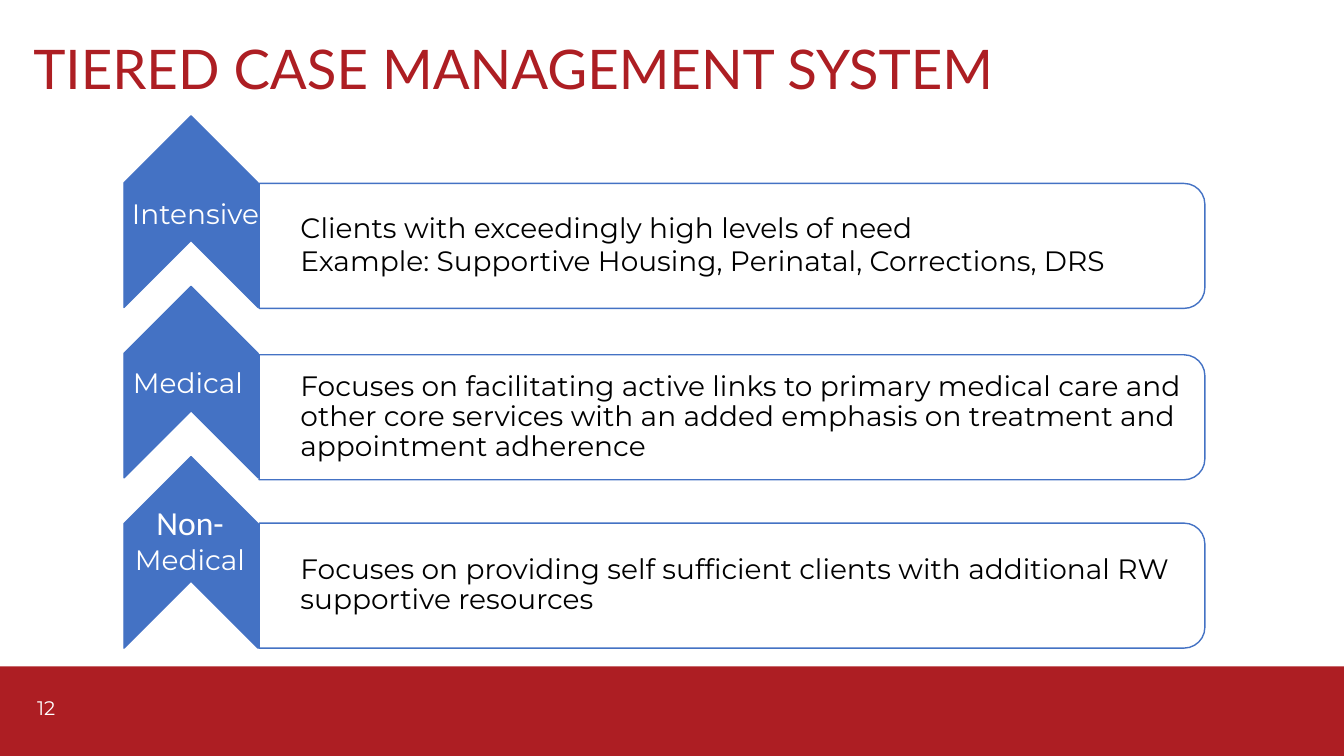
from dataclasses import dataclass

import lxml.etree
import pptx
import pptx.dml.color
import pptx.enum.shapes
import pptx.enum.text
import pptx.oxml.ns
import pptx.util

RGBColor = pptx.dml.color.RGBColor
MSO_SHAPE = pptx.enum.shapes.MSO_SHAPE
PP_ALIGN = pptx.enum.text.PP_ALIGN
MSO_ANCHOR = pptx.enum.text.MSO_ANCHOR

EMU_PER_PX = 9144  # 100 px to the inch
RED = RGBColor(0xAD, 0x1E, 0x23)
BLUE = RGBColor(0x44, 0x72, 0xC4)
WHITE = RGBColor(0xFF, 0xFF, 0xFF)
BLACK = RGBColor(0x00, 0x00, 0x00)

SLIDE_W, SLIDE_H = 1333, 750
BAND_TOP = 661
ARROW_LEFT, ARROW_TOP, ARROW_W, ARROW_H = 123, 115, 133, 190
ARROW_PITCH = 169
CARD_LEFT, CARD_W, CARD_H = 257, 938, 124
TEXT_W, TEXT_H = 932, 112


@dataclass(frozen=True)
class LabelLine:
    text: str
    size: int = 20
    font: str = "Montserrat"


@dataclass(frozen=True)
class Tier:
    label: tuple[LabelLine, ...]
    label_box: tuple[int, int, int, int]
    label_align: PP_ALIGN
    card_top: int
    description: tuple[str, ...]


TIERS = (
    Tier((LabelLine("Intensive"),), (121, 190, 151, 44), PP_ALIGN.LEFT, 182,
         ("Clients with exceedingly high levels of need",
          "Example: Supportive Housing, Perinatal, Corrections, DRS")),
    Tier((LabelLine("Medical"),), (122, 358, 133, 44), PP_ALIGN.LEFT, 352,
         ("Focuses on facilitating active links to primary medical care and other "
          "core services with an added emphasis on treatment and appointment adherence",)),
    Tier((LabelLine("Non-", 24, "Calibri"), LabelLine("Medical")),
         (121, 493, 135, 84), PP_ALIGN.CENTER, 519,
         ("Focuses on providing self sufficient clients with additional RW "
          "supportive resources",)),
)


def px(length: float) -> pptx.util.Emu:
    return pptx.util.Emu(round(length * EMU_PER_PX))


def write_line(frame, text: str, *, first: bool = True, size: int = 20,
               font: str = "Montserrat", color: RGBColor = WHITE,
               align: PP_ALIGN = PP_ALIGN.LEFT, line_spacing: float = 1.0,
               space_after: float = 0) -> None:
    """Fill the first paragraph of the frame, or append another one."""
    paragraph = frame.paragraphs[0] if first else frame.add_paragraph()
    paragraph.alignment = align
    paragraph.line_spacing = line_spacing
    paragraph.space_after = pptx.util.Pt(space_after)
    run = paragraph.add_run()
    run.text = text
    run.font.size = pptx.util.Pt(size)
    run.font.name = font
    run.font.color.rgb = color


def add_frame(slide, left: int, top: int, width: int, height: int):
    frame = slide.shapes.add_textbox(px(left), px(top), px(width), px(height)).text_frame
    frame.word_wrap = True
    return frame


def add_block(slide, preset: MSO_SHAPE, left: float, top: float, width: int, height: int,
              fill: RGBColor, outline: RGBColor | None = None, rotation: int = 0):
    block = slide.shapes.add_shape(preset, px(left), px(top), px(width), px(height))
    block.rotation = rotation
    block.shadow.inherit = False
    block.fill.solid()
    block.fill.fore_color.rgb = fill
    if outline is None:
        block.line.fill.background()
    else:
        block.line.color.rgb = outline
        block.line.width = pptx.util.Pt(1)
    return block


def add_turned_block(slide, preset: MSO_SHAPE, left: int, top: int, width: int, height: int,
                     fill: RGBColor, rotation: int):
    """Add a quarter-turned preset that covers the given visible area."""
    shift = (width - height) / 2
    return add_block(slide, preset, left + shift, top - shift, height, width,
                     fill, BLUE, rotation)


def set_opacity(block, percent: int) -> None:
    color = block.fill._xPr.find(".//" + pptx.oxml.ns.qn("a:srgbClr"))
    alpha = lxml.etree.SubElement(color, pptx.oxml.ns.qn("a:alpha"))
    alpha.set("val", str(percent * 1000))


def add_tier(slide, tier: Tier, arrow_top: int) -> None:
    add_turned_block(slide, MSO_SHAPE.CHEVRON, ARROW_LEFT, arrow_top,
                     ARROW_W, ARROW_H, BLUE, 270)
    card = add_turned_block(slide, MSO_SHAPE.ROUND_2_SAME_RECTANGLE, CARD_LEFT,
                            tier.card_top, CARD_W, CARD_H, WHITE, 90)
    set_opacity(card, 90)

    inset = (CARD_H - TEXT_H) // 2
    description = add_frame(slide, CARD_LEFT, tier.card_top + inset, TEXT_W, TEXT_H)
    description.vertical_anchor = MSO_ANCHOR.MIDDLE
    description.margin_left = px(41)
    description.margin_top = description.margin_right = description.margin_bottom = px(1)
    for index, text in enumerate(tier.description):
        write_line(description, text, first=index == 0, color=BLACK,
                   line_spacing=0.9, space_after=2.5)

    label = add_frame(slide, *tier.label_box)
    for index, line in enumerate(tier.label):
        write_line(label, line.text, first=index == 0, size=line.size,
                   font=line.font, align=tier.label_align)


def main() -> None:
    deck = pptx.Presentation()
    deck.slide_width, deck.slide_height = px(SLIDE_W), px(SLIDE_H)
    slide = deck.slides.add_slide(deck.slide_layouts[5])

    add_block(slide, MSO_SHAPE.RECTANGLE, 0, BAND_TOP, SLIDE_W, SLIDE_H - BAND_TOP, RED)
    write_line(add_frame(slide, 27, 685, 66, 40), "12", size=14)

    title = slide.shapes.title
    title.left, title.top, title.width, title.height = px(23), px(33), px(1215), px(77)
    title.text_frame.auto_size = pptx.enum.text.MSO_AUTO_SIZE.NONE
    title.text_frame.vertical_anchor = MSO_ANCHOR.MIDDLE
    write_line(title.text_frame, "TIERED CASE MANAGEMENT SYSTEM", size=39,
               font="Lato", color=RED, line_spacing=0.9)

    for index, tier in enumerate(TIERS):
        add_tier(slide, tier, ARROW_TOP + index * ARROW_PITCH)

    deck.save("out.pptx")


if __name__ == "__main__":
    main()
